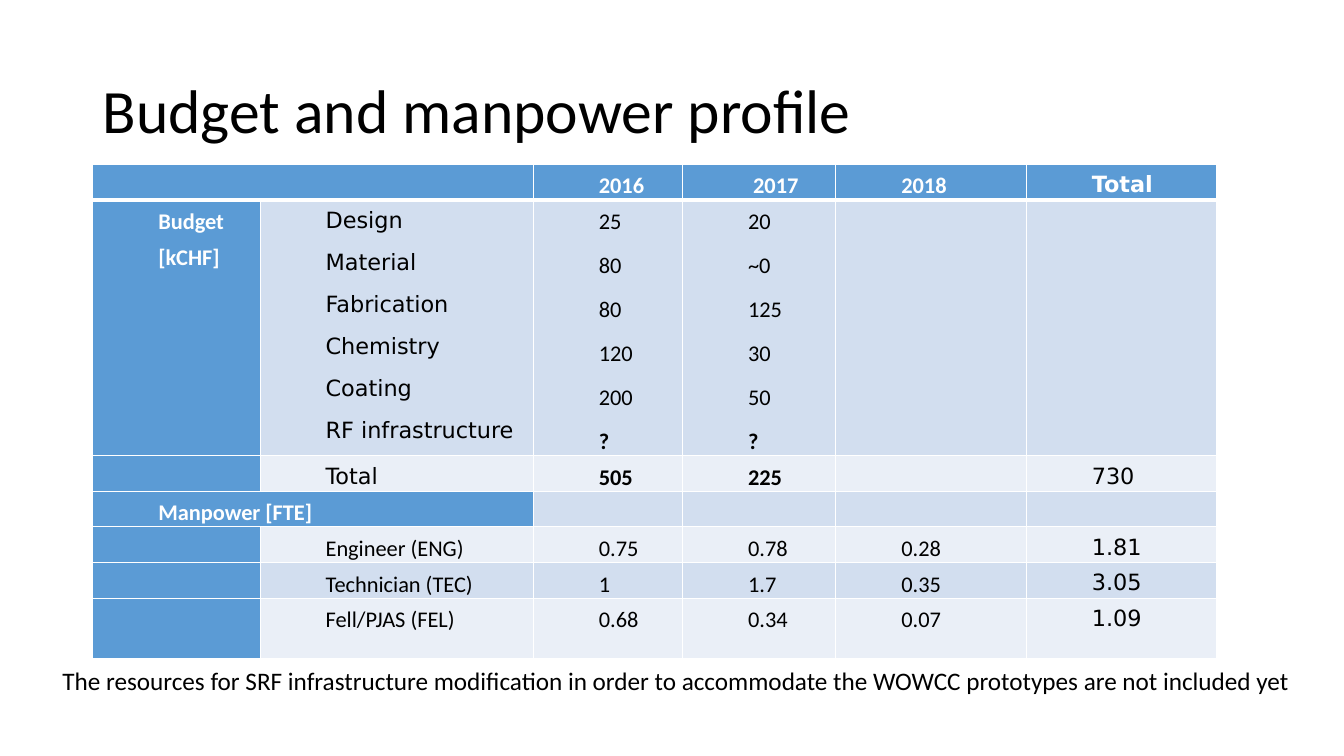
"""Build the budget and manpower profile slide."""
from dataclasses import dataclass

from lxml import etree
from pptx import Presentation
from pptx.dml.color import RGBColor
from pptx.enum import text
from pptx.oxml.ns import qn
from pptx.util import Inches, Pt

COLOURS = {"head": "5B9BD5", "dark band": "D2DEEF", "light band": "EAEFF7",
           "white": "FFFFFF", "black": "000000"}
BODY_FONT, WIDE_FONT = "Calibri", "DejaVu Sans"
COLUMN_WIDTHS = (1.66, 2.71, 1.48, 1.52, 1.89, 1.89)
BOLD_ENTRIES = {"?", "505", "225"}
BUDGET_ITEMS = "Design|Material|Fabrication|Chemistry|Coating|RF infrastructure"


@dataclass(frozen=True)
class BudgetRow:
    height: float
    band: str
    entries: tuple[str, ...]
    merged: bool = False
    label_font: str = BODY_FONT


ROWS = (
    BudgetRow(0.33, "head", ("", "", "2016", " 2017", "2018", "Total"), merged=True),
    BudgetRow(2.03, "dark band",
              ("Budget [kCHF]", BUDGET_ITEMS, "25|80|80|120|200|?", "20|~0|125|30|50|?", "", ""),
              label_font=WIDE_FONT),
    BudgetRow(0.32, "light band", ("", "Total", "505", "225", "", "730"), label_font=WIDE_FONT),
    BudgetRow(0.33, "dark band", ("Manpower [FTE]", "", "", "", "", ""), merged=True),
    BudgetRow(0.3, "light band", ("", "Engineer (ENG)", "0.75", "0.78", "0.28", "1.81")),
    BudgetRow(0.3, "dark band", ("", "Technician (TEC)", "1", "1.7", "0.35", "3.05")),
    BudgetRow(0.6, "light band", ("", "Fell/PJAS (FEL)", "0.68", "0.34", "0.07", "1.09")),
)


def add_span(para, words: str, size: float, font: str = BODY_FONT,
             colour: str = "black", bold: bool = False) -> None:
    """Add one formatted run to a paragraph."""
    span = para.add_run()
    span.text = words
    span.font.size = Pt(size)
    span.font.name = font
    span.font.bold = bold
    span.font.color.rgb = RGBColor.from_string(COLOURS[colour])


def add_borders(cell, bottom: float) -> None:
    """Give a cell white borders, with its own width at the bottom."""
    properties = cell._tc.get_or_add_tcPr()
    for side, width in (("L", 1), ("R", 1), ("T", 1), ("B", bottom)):
        line = etree.SubElement(properties, qn(f"a:ln{side}"), w=str(Pt(width)))
        fill = etree.SubElement(line, qn("a:solidFill"))
        etree.SubElement(fill, qn("a:srgbClr"), val=COLOURS["white"])


def fill_cell(cell, row: BudgetRow, column: int) -> None:
    """Format one table cell and write its entries."""
    header = row.band == "head"
    headed = header or column == 0
    add_borders(cell, 3 if header else 1)
    cell.fill.solid()
    cell.fill.fore_color.rgb = RGBColor.from_string(COLOURS["head" if headed else row.band])
    cell.margin_left = cell.margin_right = Inches(0.06)
    cell.margin_top = cell.margin_bottom = 0
    if column == len(COLUMN_WIDTHS) - 1:
        font = WIDE_FONT
    else:
        font = row.label_font if column == 1 else BODY_FONT
    frame = cell.text_frame
    for index, entry in enumerate(row.entries[column].split("|")):
        para = frame.add_paragraph() if index else frame.paragraphs[0]
        if not entry:
            etree.SubElement(para._p, qn("a:endParaRPr"), sz="1200")
            continue
        para.alignment = text.PP_ALIGN.JUSTIFY
        para.line_spacing = 1.3
        para.space_before = Pt(6)
        para._p.get_or_add_pPr().set("marL", str(Inches(0.59)))
        add_span(para, entry, 16, font, "white" if headed else "black",
                 headed or entry in BOLD_ENTRIES)


def add_title(page) -> None:
    """Place and write the slide title."""
    title = page.shapes.title
    title.left, title.top = Inches(0.92), Inches(0.4)
    title.width, title.height = Inches(11.5), Inches(1.45)
    title.text_frame.vertical_anchor = text.MSO_ANCHOR.MIDDLE
    para = title.text_frame.paragraphs[0]
    para.alignment = text.PP_ALIGN.LEFT
    para.line_spacing = 0.9
    add_span(para, "Budget and manpower profile", 44)


def add_budget_table(page) -> None:
    """Draw the budget and manpower table."""
    table = page.shapes.add_table(len(ROWS), len(COLUMN_WIDTHS), Inches(0.92), Inches(1.63),
                                  Inches(11.15), Inches(4.21)).table
    for column, width in enumerate(COLUMN_WIDTHS):
        table.columns[column].width = Inches(width)
    for index, row in enumerate(ROWS):
        table.rows[index].height = Inches(row.height)
        for column in range(len(COLUMN_WIDTHS)):
            fill_cell(table.cell(index, column), row, column)
        if row.merged:
            table.cell(index, 0).merge(table.cell(index, 1))


def add_resource_note(page) -> None:
    """Write the note below the table."""
    box = page.shapes.add_textbox(Inches(0.52), Inches(6.55), Inches(12.52), Inches(0.4))
    box.text_frame.word_wrap = False
    box.text_frame.auto_size = text.MSO_AUTO_SIZE.SHAPE_TO_FIT_TEXT
    add_span(box.text_frame.paragraphs[0],
             "The resources for SRF infrastructure modification in order to accommodate "
             "the WOWCC prototypes are not included yet", 18)


def main() -> None:
    """Build and save the deck."""
    deck = Presentation()
    deck.slide_width, deck.slide_height = Inches(13.33), Inches(7.5)
    page = deck.slides.add_slide(deck.slide_layouts[5])
    add_title(page)
    add_budget_table(page)
    add_resource_note(page)
    deck.save("out.pptx")


if __name__ == "__main__":
    main()
